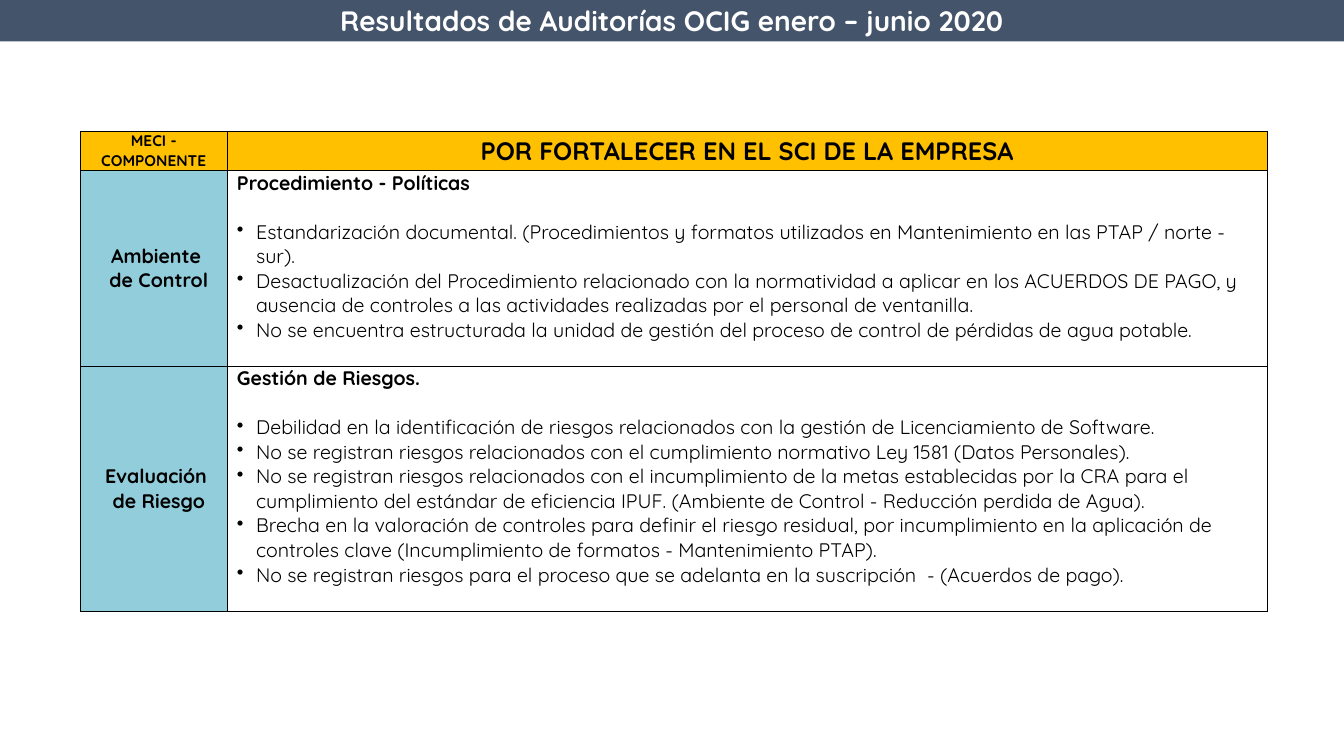
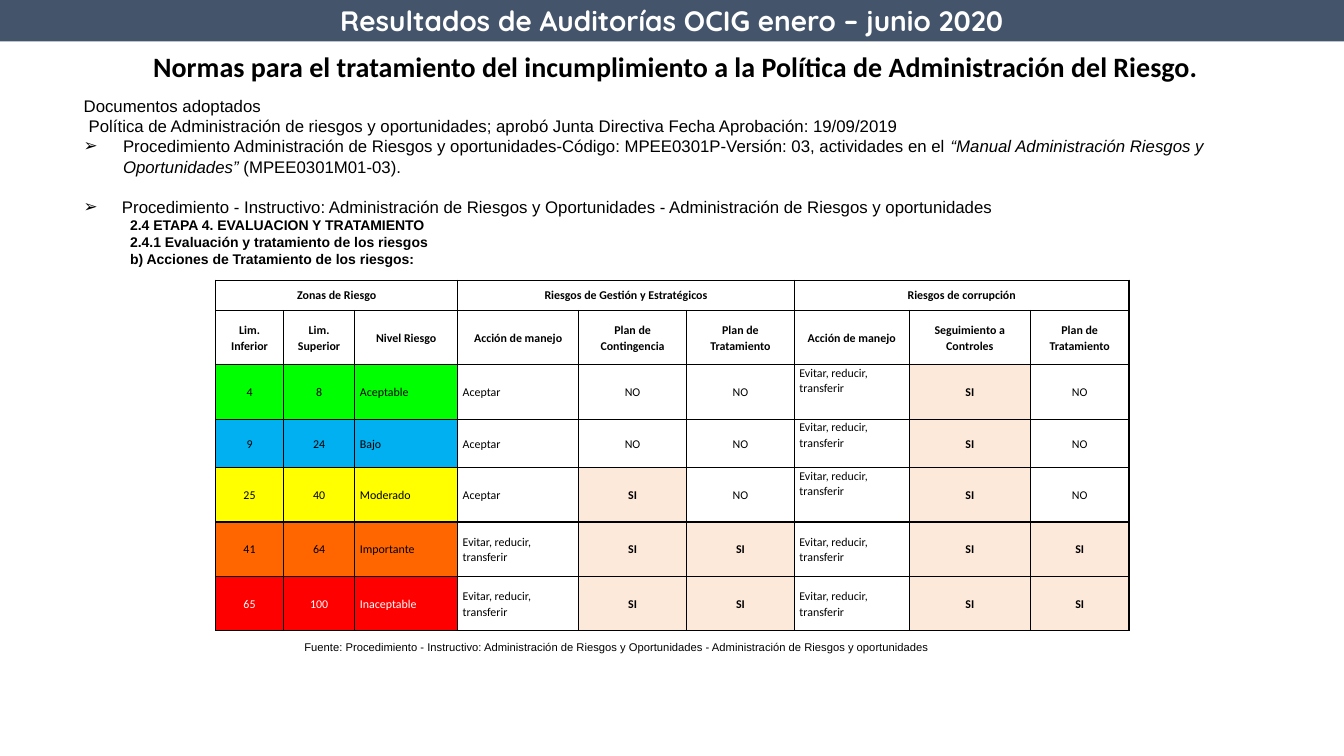
import pptx
import pptx.dml.color
import pptx.enum.text
import pptx.oxml
import pptx.util
from lxml import etree
from pptx.util import Inches

COLORS = {
    "band": "44546A", "black": "000000", "white": "FFFFFF",
    "header": "FFC000", "component": "92CDDC", "yes": "FDE9D9",
    "green": "00FF00", "blue": "00B0F0", "yellow": "FFFF00",
    "orange": "FF6600", "red": "FF0000",
}
ALIGN = pptx.enum.text.PP_ALIGN
ANCHOR = pptx.enum.text.MSO_ANCHOR

# Content shared by both slides
TITLE = "Resultados de Auditorías OCIG enero – junio 2020"

# Content of the findings slide
FINDINGS_HEADER = ["MECI - COMPONENTE", "POR FORTALECER EN EL SCI DE LA EMPRESA"]
FINDINGS = [
    (["Ambiente ", "de Control"], "Procedimiento - Políticas", [
        "Estandarización documental. (Procedimientos y formatos utilizados en "
        "Mantenimiento en las PTAP / norte - sur).",
        "Desactualización del Procedimiento relacionado con la normatividad a aplicar en los "
        "ACUERDOS DE PAGO, y ausencia de controles a las actividades realizadas por el "
        "personal de ventanilla.",
        "No se encuentra estructurada la unidad de gestión del proceso de control de "
        "pérdidas de agua potable.",
    ]),
    (["Evaluación ", "de Riesgo"], "Gestión de Riesgos.", [
        "Debilidad en la identificación de riesgos relacionados con la gestión de "
        "Licenciamiento de Software.",
        "No se registran riesgos relacionados con el cumplimiento normativo Ley 1581 "
        "(Datos Personales).",
        "No se registran riesgos relacionados con el incumplimiento de la metas establecidas "
        "por la CRA para el cumplimiento del estándar de eficiencia IPUF. (Ambiente de "
        "Control - Reducción perdida de Agua).",
        "Brecha en la valoración de controles para definir el riesgo residual, por "
        "incumplimiento en la aplicación de controles clave (Incumplimiento de formatos - "
        "Mantenimiento PTAP).",
        "No se registran riesgos para el proceso que se adelanta en la suscripción  - "
        "(Acuerdos de pago).",
    ]),
]

# Content of the policy slide
HEADING = ("Normas para el tratamiento del incumplimiento a la Política de "
           "Administración del Riesgo.")
INSTRUCTION = ("Procedimiento - Instructivo: Administración de Riesgos y Oportunidades - "
               "Administración de Riesgos y oportunidades")
# Runs are (text, style), where style is "", "b" or "i"
DOCUMENTS = [
    (0, None, 12, [("Documentos adoptados", "")]),
    (0.05, None, 12, [("Política de Administración de riesgos y oportunidades; aprobó Junta "
                       "Directiva Fecha Aprobación: 19/09/2019", "")]),
    (0.39, "➢", 12, [
        ("Procedimiento Administración de Riesgos y oportunidades-Código: MPEE0301P-Versión: "
         "03, actividades en el ", ""),
        ("“Manual Administración Riesgos y Oportunidades”", "i"),
        (" (MPEE0301M01-03).", "")]),
    (0.38, "➢", 12, [(INSTRUCTION, "")]),
    (0.46, None, 10, [("2.4 ETAPA 4. EVALUACION Y TRATAMIENTO", "b")]),
    (0.46, None, 10, [("2.4.1 Evaluación y tratamiento de los riesgos", "b")]),
    (0.46, None, 10, [("b) Acciones de Tratamiento de los riesgos:", "b")]),
]
RISK_GROUPS = ["Zonas de Riesgo", "Riesgos de Gestión y Estratégicos", "Riesgos de corrupción"]
RISK_HEADER = ["Lim. Inferior", "Lim. Superior", "Nivel Riesgo",
               "Acción de manejo", "Plan de Contingencia", "Plan de Tratamiento",
               "Acción de manejo", "Seguimiento a Controles", "Plan de Tratamiento"]
AVOID = "Evitar, reducir, transferir"
RISK_LEVELS = [
    ("green", ["4", "8", "Aceptable", "Aceptar", "NO", "NO", AVOID, "SI", "NO"]),
    ("blue", ["9", "24", "Bajo", "Aceptar", "NO", "NO", AVOID, "SI", "NO"]),
    ("yellow", ["25", "40", "Moderado", "Aceptar", "SI", "NO", AVOID, "SI", "NO"]),
    ("orange", ["41", "64", "Importante", AVOID, "SI", "SI", AVOID, "SI", "SI"]),
    ("red", ["65", "100", "Inaceptable", AVOID, "SI", "SI", AVOID, "SI", "SI"]),
]
GROUP_SIZE = 3
TEXT_COLUMNS = (2, 3, 6)
CORRUPTION_ACTION = 6


def rgb(name):
    return pptx.dml.color.RGBColor.from_string(COLORS[name])


def write(frame, runs, font, size, color="black", align=ALIGN.LEFT, left=0, bullet=None,
          hang=0, before=0, after=0, spacing=1.0):
    """Add one paragraph of (text, style) runs, filling the empty first one."""
    paragraph = frame.add_paragraph() if frame.text else frame.paragraphs[0]
    properties = paragraph._p.get_or_add_pPr()
    properties.set("marL", str(Inches(left)))
    properties.set("indent", str(-Inches(hang)))
    marker = etree.SubElement(
        properties, pptx.oxml.ns.qn("a:buChar" if bullet else "a:buNone"))
    if bullet:
        marker.set("char", bullet)
    paragraph.alignment = align
    paragraph.space_before = pptx.util.Pt(before)
    paragraph.space_after = pptx.util.Pt(after)
    paragraph.line_spacing = spacing
    for text, style in runs:
        run = paragraph.add_run()
        run.text = text
        run.font.name = font
        run.font.size = pptx.util.Pt(size)
        run.font.bold = style == "b"
        run.font.italic = style == "i"
        run.font.color.rgb = rgb(color)


def add_titled_slide(presentation, layout_index):
    """Add a slide whose title is the dark band across the top."""
    slide = presentation.slides.add_slide(presentation.slide_layouts[layout_index])
    title = slide.shapes.title
    title.left, title.top = 0, 0
    title.width, title.height = presentation.slide_width, Inches(0.41)
    title.fill.solid()
    title.fill.fore_color.rgb = rgb("band")
    frame = title.text_frame
    frame.auto_size = pptx.enum.text.MSO_AUTO_SIZE.NONE
    frame.vertical_anchor = ANCHOR.MIDDLE
    write(frame, [(TITLE, "b")], "Quicksand", 20, "white", ALIGN.CENTER)
    return slide


def add_text(slide, left, top, width, height, text, style, font, size, align):
    frame = slide.shapes.add_textbox(
        Inches(left), Inches(top), Inches(width), Inches(height)).text_frame
    frame.word_wrap = True
    write(frame, [(text, style)], font, size, align=align)


def add_grid(slide, left, top, widths, heights):
    table = slide.shapes.add_table(
        len(heights), len(widths), Inches(left), Inches(top),
        Inches(sum(widths)), Inches(sum(heights))).table
    for column, width in zip(table.columns, widths):
        column.width = Inches(width)
    for row, height in zip(table.rows, heights):
        row.height = Inches(height)
    return table


def format_cell(cell, fill, border, side_margin=0):
    """Set borders, fill, margins and anchor; return the text frame."""
    properties = cell._tc.get_or_add_tcPr()
    for side in "LRTB":
        line = etree.SubElement(properties, pptx.oxml.ns.qn("a:ln" + side),
                                w=str(pptx.util.Pt(border)))
        solid = etree.SubElement(line, pptx.oxml.ns.qn("a:solidFill"))
        etree.SubElement(solid, pptx.oxml.ns.qn("a:srgbClr"), val=COLORS["black"])
    cell.fill.solid()
    cell.fill.fore_color.rgb = rgb(fill)
    cell.margin_left = cell.margin_right = Inches(side_margin)
    cell.margin_top = cell.margin_bottom = 0
    cell.vertical_anchor = ANCHOR.MIDDLE
    return cell.text_frame


def build_findings(presentation):
    slide = add_titled_slide(presentation, 5)
    table = add_grid(slide, 0.8, 1.3, [1.45, 10.32], [0.39, 1.94, 2.43])
    for column, (text, size) in enumerate(zip(FINDINGS_HEADER, (11, 18))):
        frame = format_cell(table.cell(0, column), "header", 0.5)
        write(frame, [(text, "b")], "Quicksand", size, align=ALIGN.CENTER)

    for row, (component, topic, items) in enumerate(FINDINGS, 1):
        frame = format_cell(table.cell(row, 0), "component", 0.5)
        for line in component:
            write(frame, [(line, "b")], "Quicksand", 14, align=ALIGN.CENTER, left=0.1)
        cell = table.cell(row, 1)
        frame = format_cell(cell, "white", 0.5)
        cell.margin_bottom = Inches(0.24)
        write(frame, [(topic, "b")], "Quicksand", 14, left=0.1, after=17.5)
        for item in items:
            write(frame, [(item, "")], "Quicksand", 14, left=0.29, bullet="•", hang=0.19)


def build_policy(presentation):
    slide = add_titled_slide(presentation, 1)
    add_text(slide, 0.56, 0.44, 12.28, 0.44, HEADING, "b", "Calibri", 20, ALIGN.CENTER)

    # Adopted documents
    body = slide.placeholders[1]
    body.left, body.top = Inches(0.73), Inches(0.9)
    body.width, body.height = Inches(11.8), Inches(1.82)
    frame = body.text_frame
    frame.auto_size = pptx.enum.text.MSO_AUTO_SIZE.NONE
    frame.vertical_anchor = ANCHOR.TOP
    for left, bullet, size, runs in DOCUMENTS:
        write(frame, runs, "Arial", size, left=left, bullet=bullet,
              hang=left if bullet else 0,
              before=14.3 if runs[0][0] == INSTRUCTION else 0)

    # Risk table
    table = add_grid(slide, 2.14, 2.78,
                     [0.67, 0.71, 1.02, 1.2, 1.07, 1.07, 1.14, 1.2, 0.98],
                     [0.3, 0.54, 0.54, 0.48, 0.54, 0.54, 0.54])

    def fill_cell(row, column, text, fill="white", style="", color="black",
                  align=ALIGN.CENTER):
        frame = format_cell(table.cell(row, column), fill, 1, 0.05)
        if text:
            write(frame, [(text, style)], "Calibri", 8.5, color, align, spacing=1.07)

    for column, label in enumerate(RISK_HEADER):
        group, offset = divmod(column, GROUP_SIZE)
        fill_cell(0, column, "" if offset else RISK_GROUPS[group], style="b")
        fill_cell(1, column, label, style="b")
    for start in range(0, len(RISK_HEADER), GROUP_SIZE):
        table.cell(0, start).merge(table.cell(0, start + GROUP_SIZE - 1))

    for row, (level, values) in enumerate(RISK_LEVELS, 2):
        for column, text in enumerate(values):
            in_zone = column < GROUP_SIZE
            required = text == "SI"
            fill_cell(row, column, text,
                      fill=level if in_zone else "yes" if required else "white",
                      style="b" if required else "",
                      color="white" if in_zone and level == "red" else "black",
                      align=ALIGN.LEFT if column in TEXT_COLUMNS else ALIGN.CENTER)
        if values[3] == "Aceptar":
            table.cell(row, CORRUPTION_ACTION).vertical_anchor = ANCHOR.TOP

    add_text(slide, 2.92, 6.3, 7.85, 0.24, "Fuente: " + INSTRUCTION, "", "Arial", 8,
             ALIGN.LEFT)


def main():
    presentation = pptx.Presentation()
    presentation.slide_width = Inches(13.33)
    presentation.slide_height = Inches(7.5)
    build_findings(presentation)
    build_policy(presentation)
    presentation.save("out.pptx")


if __name__ == "__main__":
    main()
